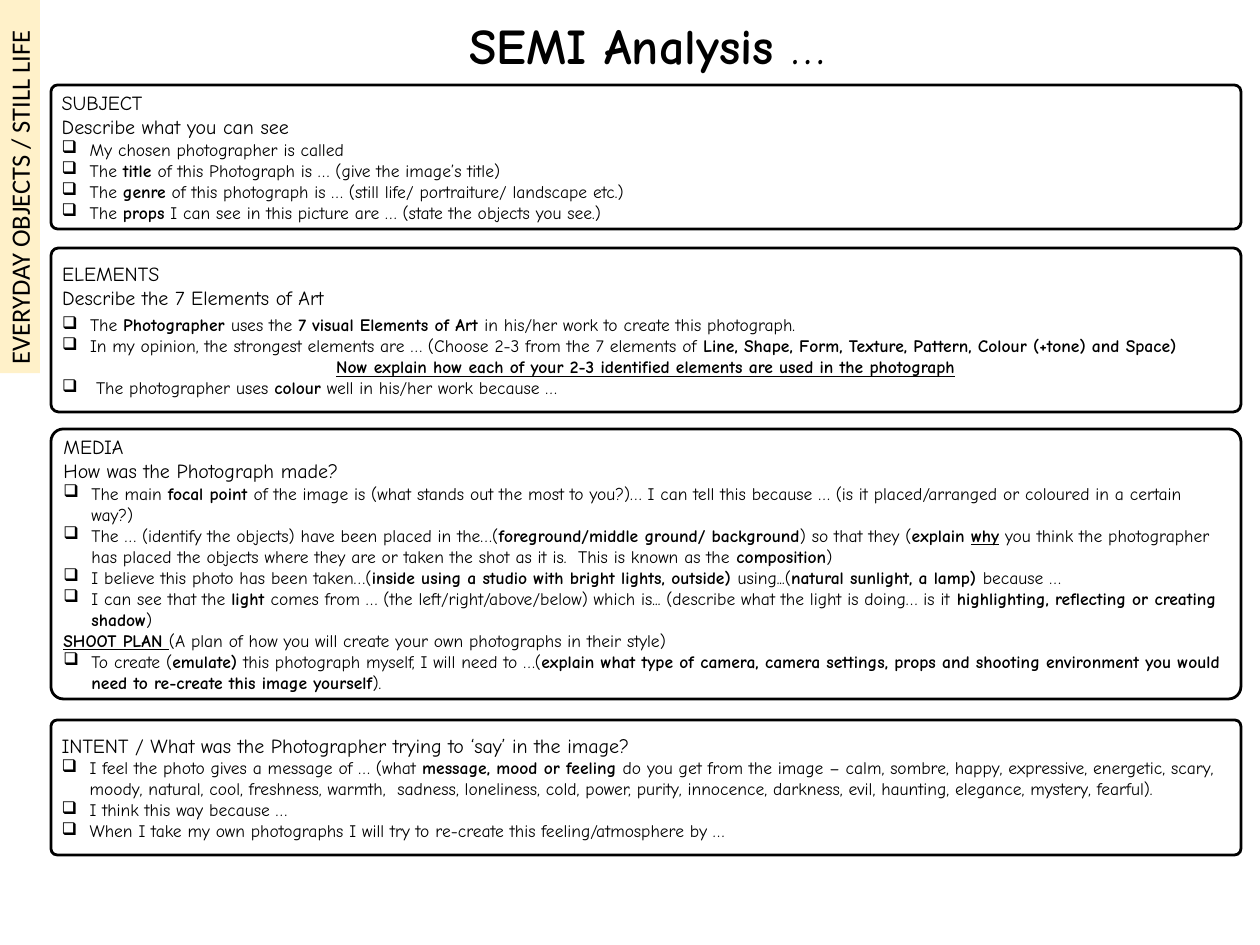
from lxml.etree import SubElement
from pptx import Presentation
from pptx.dml.color import RGBColor
from pptx.enum.shapes import MSO_SHAPE
from pptx.enum.text import MSO_ANCHOR, MSO_AUTO_SIZE, PP_ALIGN
from pptx.oxml.ns import qn
from pptx.util import Pt

PX = 10160
THEME = {
    "ink": RGBColor(0, 0, 0),
    "tab": RGBColor(0xFF, 0xC0, 0),
    "hand": "Comic Neue",
    "plain": "Calibri",
    "title": Pt(40),
    "head": Pt(16),
    "body": Pt(14),
    "side": Pt(21.2),
    "line": Pt(2.25),
}
FRAME = {"word_wrap": True, "auto_size": MSO_AUTO_SIZE.NONE,
         "vertical_anchor": MSO_ANCHOR.MIDDLE}

# Markup: *bold*, _underline_
PANELS = [
    (85, 144, [
        ("head", "SUBJECT"),
        ("head", "Describe what you can see"),
        ("list", "My chosen photographer is called"),
        ("list", "The *title *of this Photograph is … (give the image’s title)"),
        ("list", "The *genre* of this photograph is … (still life/ portraiture/ landscape etc.)"),
        ("list", "The *props* I can see in this picture are … (state the objects you see.)"),
    ]),
    (248, 164, [
        ("head", "ELEMENTS"),
        ("head", "Describe the 7 Elements of Art"),
        ("first", "The *Photographer *uses the *7 visual Elements of Art *in his/her work to create this photograph."),
        ("list", "In my opinion, the strongest elements are … (Choose 2-3 from the 7 elements of "
                 "*Line, Shape, Form, Texture, Pattern, Colour (+tone) and Space)*"),
        ("mid", "*_Now explain how each of your 2-3 identified elements are used in the photograph_*"),
        ("wide", "The photographer uses *colour* well in his/her work because …"),
    ]),
    (429, 270, [
        ("head", "MEDIA"),
        ("head", "How was the Photograph made?"),
        ("list", "The main *focal point *of the image is (what stands out the most to you?)… "
                 "I can tell this because … (is it placed/arranged or coloured in a certain way?)"),
        ("list", "The … (identify the objects) have been placed in the…(*foreground/middle ground/ background*) "
                 "so that they (*explain _why_* you think the photographer has placed the objects where they are "
                 "or taken the shot as it is.  This is known as the *composition*)"),
        ("list", "I believe this photo has been taken…(*inside using a studio with bright lights, outside) *"
                 "using...(*natural sunlight, a lamp) *because …"),
        ("list", "I can see that the *light *comes from … (the left/right/above/below) which is... "
                 "(describe what the light is doing… is it* highlighting, reflecting or creating shadow*)"),
        ("body", "*_SHOOT PLAN _*(A plan of how you will create your own photographs in their style)"),
        ("list", "To create (*emulate) *this photograph myself, I will need to …(*explain what type of camera, "
                 "camera settings, props and shooting environment you would need to re-create this image yourself*)."),
    ]),
    (720, 135, [
        ("head", "INTENT / What was the Photographer trying to ‘say’ in the image?"),
        ("list", "I feel the photo gives a message of … (what *message, mood or feeling *do you get from the image – "
                 "calm, sombre, happy, expressive, energetic, scary, moody, natural, cool, freshness, warmth,  sadness, "
                 "loneliness, cold, power, purity, innocence, darkness, evil, haunting, elegance, mystery, fearful)."),
        ("list", "I think this way because …"),
        ("list", "When I take my own photographs I will try to re-create this feeling/atmosphere by …"),
    ]),
]
INDENT = {"list": 28, "first": 28, "wide": 34}


def style(item, form):
    for key, value in form.items():
        setattr(item, key, value)


def write(para, text, size, face):
    for i, part in enumerate(text.split("*")):
        for j, piece in enumerate(part.split("_")):
            if piece:
                run = para.add_run()
                run.text = piece
                style(run.font, {"name": face, "size": size, "bold": i % 2 == 1,
                                 "underline": j % 2 == 1})
                run.font.color.rgb = THEME["ink"]


deck = Presentation()
style(deck, {"slide_width": 1260 * PX, "slide_height": 945 * PX})
slide = deck.slides.add_slide(deck.slide_layouts[5])

for top, high, lines in PANELS:
    box = slide.shapes.add_shape(MSO_SHAPE.ROUNDED_RECTANGLE, 51 * PX, top * PX, 1190 * PX, high * PX)
    box.adjustments[0] = 0.046
    box.shadow.inherit = False
    box.fill.background()
    box.line.color.rgb = THEME["ink"]
    box.line.width = THEME["line"]
    frame = box.text_frame
    style(frame, FRAME)
    for i, (kind, text) in enumerate(lines):
        para = frame.add_paragraph() if i else frame.paragraphs[0]
        para.alignment = PP_ALIGN.CENTER if kind == "mid" else PP_ALIGN.LEFT
        write(para, text, THEME["head" if kind == "head" else "body"], THEME["hand"])
        if kind == "first":
            para.space_before = Pt(4)
        if kind in INDENT:
            dent = INDENT[kind] * PX
            prop = para._p.get_or_add_pPr()
            prop.set("marL", str(dent))
            prop.set("indent", str(-dent))
            SubElement(prop, qn("a:buChar"), char="❑")

title = slide.shapes.title
style(title, {"left": 190 * PX, "top": 27 * PX, "width": 914 * PX, "height": 36 * PX})
style(title.text_frame, FRAME)
para = title.text_frame.paragraphs[0]
para.alignment = PP_ALIGN.CENTER
write(para, "*SEMI Analysis *…", THEME["title"], THEME["hand"])

tab = slide.shapes.add_shape(MSO_SHAPE.RECTANGLE, -167 * PX, 166 * PX, 373 * PX, 41 * PX)
tab.rotation = 270
tab.shadow.inherit = False
tab.fill.solid()
tab.fill.fore_color.rgb = THEME["tab"]
SubElement(tab.fill._xPr.find(".//" + qn("a:srgbClr")), qn("a:alpha"), val="21000")
tab.line.fill.background()
style(tab.text_frame, {**FRAME, "vertical_anchor": MSO_ANCHOR.TOP,
                       "auto_size": MSO_AUTO_SIZE.SHAPE_TO_FIT_TEXT})
para = tab.text_frame.paragraphs[0]
para.alignment = PP_ALIGN.LEFT
write(para, "EVERYDAY OBJECTS / STILL LIFE", THEME["side"], THEME["plain"])

deck.save("out.pptx")
